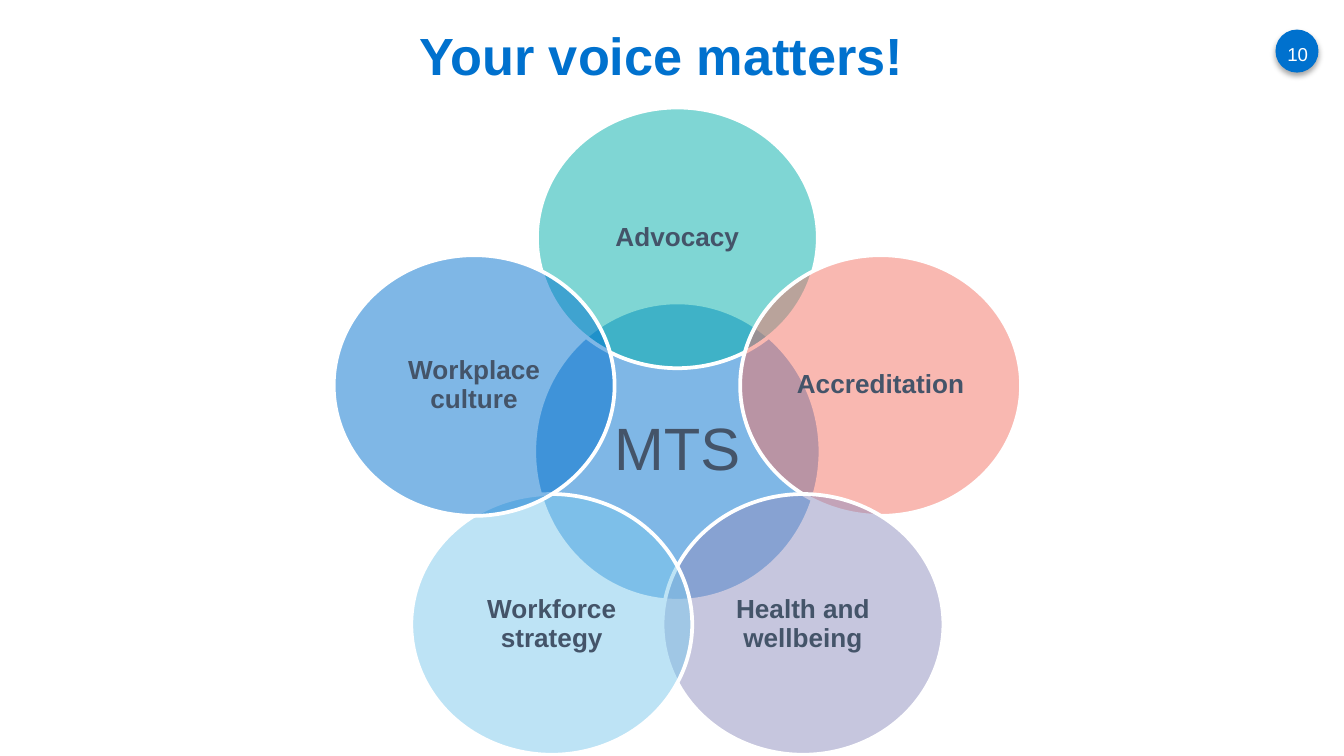
from dataclasses import dataclass
from math import cos, radians, sin

from lxml.etree import SubElement
from pptx import Presentation
from pptx.dml.color import RGBColor as Color
from pptx.enum.shapes import MSO_SHAPE as Shape
from pptx.enum.text import MSO_ANCHOR as Anchor, PP_ALIGN as Align
from pptx.oxml.ns import qn
from pptx.util import Inches, Pt


@dataclass(frozen=True)
class Theme:
    """Hold the colours, font and type sizes of the slide."""
    font: str = "Arial"
    blue: str = "0071CE"
    teal: str = "00AFAA"
    coral: str = "F47264"
    violet: str = "8F8FBF"
    sky: str = "7CC8EC"
    ink: str = "445469"
    white: str = "FFFFFF"
    shadow: str = "000000"
    title_size: int = 28
    hub_size: int = 32
    petal_size: int = 14
    number_size: int = 10


THEME = Theme()
HUB_X, HUB_Y = 5.04, 3.36
ORBIT = 1.59
PETAL_SIZE = (2.09, 1.94)
PETALS = [
    ("Advocacy", THEME.teal),
    ("Accreditation", THEME.coral),
    ("Health and wellbeing", THEME.violet),
    ("Workforce strategy", THEME.sky),
    ("Workplace culture", THEME.blue),
]


def add_alpha(color_element, percent):
    """Set the opacity of a colour element."""
    SubElement(color_element, qn("a:alpha"), val=str(percent * 1000))


def add_oval(page, left, top, width, height, color):
    """Add a plain filled oval without line or shadow."""
    oval = page.shapes.add_shape(
        Shape.OVAL, Inches(left), Inches(top), Inches(width), Inches(height))
    oval.shadow.inherit = False
    oval.fill.solid()
    oval.fill.fore_color.rgb = Color.from_string(color)
    oval.line.fill.background()
    return oval


def add_label(page, text, area, size, color, bold=False, insets=(0.1, 0.05),
              spacing=1.0, wrap=True, anchor=Anchor.MIDDLE):
    """Add centred text in a box given as left, top, width and height."""
    box = page.shapes.add_textbox(*(Inches(length) for length in area))
    frame = box.text_frame
    frame.word_wrap = wrap
    frame.vertical_anchor = anchor
    frame.margin_left = frame.margin_right = Inches(insets[0])
    frame.margin_top = frame.margin_bottom = Inches(insets[1])
    para = frame.paragraphs[0]
    para.text = text
    para.alignment = Align.CENTER
    para.line_spacing = spacing
    para.font.name = THEME.font
    para.font.size = Pt(size)
    para.font.bold = bold
    para.font.color.rgb = Color.from_string(color)


def add_circle(page, text, center, size, color, type_size, inset, bold):
    """Add a translucent Venn circle with its label in the inscribed box."""
    (x, y), (width, height) = center, size
    oval = add_oval(page, x - width / 2, y - height / 2, width, height, color)
    add_alpha(oval.element.spPr.find(qn("a:solidFill"))[0], 50)
    oval.line.color.rgb = Color.from_string(THEME.white)
    oval.line.width = Pt(2)
    inner_width, inner_height = width * cos(radians(45)), height * sin(radians(45))
    area = (x - inner_width / 2, y - inner_height / 2, inner_width, inner_height)
    add_label(page, text, area, type_size, THEME.ink, bold, (inset, inset), 0.9)


def add_venn(page):
    """Add the hub and the petals evenly spaced around it."""
    add_circle(page, "MTS", (HUB_X, HUB_Y), (2.13, 2.22), THEME.blue,
               THEME.hub_size, 0.04, False)
    for index, (text, color) in enumerate(PETALS):
        angle = radians(index * 360 / len(PETALS) - 90)
        center = (HUB_X + ORBIT * cos(angle), HUB_Y + ORBIT * sin(angle))
        add_circle(page, text, center, PETAL_SIZE, color,
                   THEME.petal_size, 0.02, True)


def add_page_number(page, number):
    """Add the page number on a round badge with a soft shadow."""
    badge = add_oval(page, 9.49, 0.22, 0.32, 0.32, THEME.blue)
    effects = badge.element.spPr.find(qn("a:effectLst"))
    shadow = SubElement(effects, qn("a:outerShdw"), blurRad=str(Pt(3.1)),
                        dist=str(Pt(1.8)), dir=str(90 * 60000), rotWithShape="0")
    add_alpha(SubElement(shadow, qn("a:srgbClr"), val=THEME.shadow), 35)
    add_label(page, number, (9.49, 0.28, 0.33, 0.25), THEME.number_size,
              THEME.white, insets=(0.07, 0.04), wrap=False, anchor=Anchor.TOP)


def main():
    """Build the slide and save it."""
    deck = Presentation()
    deck.slide_width = Inches(10)
    deck.slide_height = deck.slide_width * 9 // 16
    page = deck.slides.add_slide(deck.slide_layouts[6])
    add_page_number(page, "10")
    add_label(page, "Your voice matters!", (0.51, 0.11, 8.82, 0.59),
              THEME.title_size, THEME.blue, bold=True)
    add_venn(page)
    deck.save("out.pptx")


if __name__ == "__main__":
    main()
